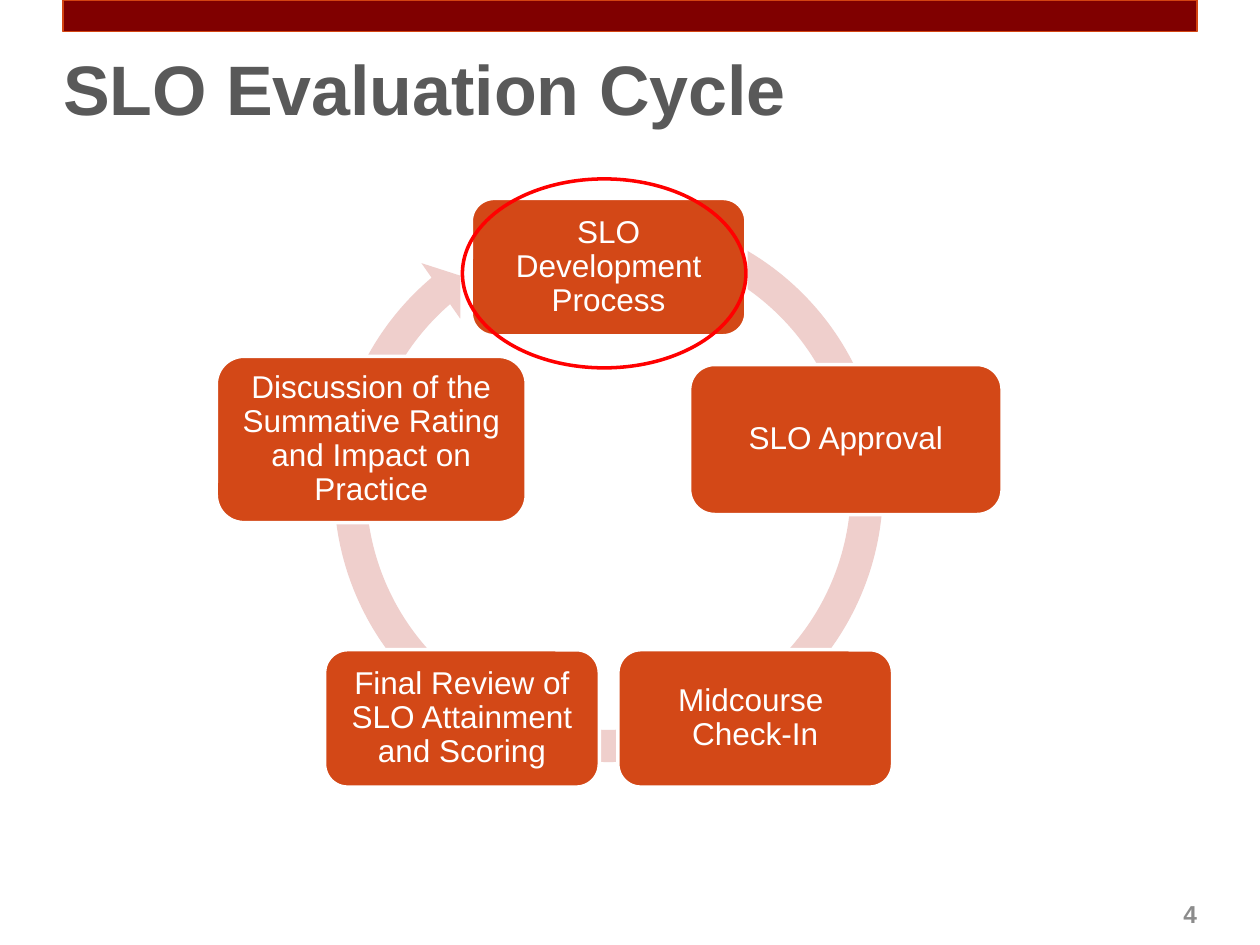
from dataclasses import dataclass
from math import cos, radians, sin

from pptx import Presentation
from pptx.dml.color import RGBColor
from pptx.enum.shapes import MSO_SHAPE
from pptx.enum.text import MSO_ANCHOR, MSO_AUTO_SIZE, PP_ALIGN
from pptx.util import Inches, Pt

CENTER_X, CENTER_Y, RADIUS = 4.83, 4.1, 1.98
ARROW_SIZE = 4.64


@dataclass
class Stage:
    text: str
    width: float = 2.18
    height: float = 1.09


STAGES = [
    Stage("SLO Development Process"),
    Stage("SLO Approval", 2.48, 1.19),
    Stage("Midcourse \nCheck-In"),
    Stage("Final Review of SLO Attainment and Scoring"),
    Stage("Discussion of the Summative Rating and Impact on Practice", 2.46, 1.32),
]


def color(value: str) -> RGBColor:
    return RGBColor.from_string(value)


def write(shape, text: str, *, size: float, ink: str, bold: bool = False,
          align=PP_ALIGN.LEFT, anchor=MSO_ANCHOR.BOTTOM,
          inset: tuple[float, float] = (0, 0), spacing: float = 1.0) -> None:
    """Fill a shape with text; inset is (horizontal, vertical) in inches."""
    frame = shape.text_frame
    frame.text = text
    frame.word_wrap = True
    frame.auto_size = MSO_AUTO_SIZE.NONE
    frame.vertical_anchor = anchor
    frame.margin_left = frame.margin_right = Inches(inset[0])
    frame.margin_top = frame.margin_bottom = Inches(inset[1])
    for paragraph in frame.paragraphs:
        paragraph.alignment = align
        paragraph.line_spacing = spacing
        for run in paragraph.runs:
            run.font.name = "Arial"
            run.font.size = Pt(size)
            run.font.bold = bold
            run.font.color.rgb = color(ink)


def add_figure(slide, kind, left: float, top: float, width: float, height: float,
               *, fill: str = "", line: str = "", weight: float = 2):
    figure = slide.shapes.add_shape(
        kind, Inches(left), Inches(top), Inches(width), Inches(height))
    figure.shadow.inherit = False
    if fill:
        figure.fill.solid()
        figure.fill.fore_color.rgb = color(fill)
    else:
        figure.fill.background()
    if line:
        figure.line.color.rgb = color(line)
        figure.line.width = Pt(weight)
    else:
        figure.line.fill.background()
    return figure


def add_stage(slide, stage: Stage, angle: float) -> None:
    """Center a stage on the ring, angle in degrees clockwise from the top."""
    x = CENTER_X + RADIUS * sin(radians(angle))
    y = CENTER_Y - RADIUS * cos(radians(angle))
    box = add_figure(slide, MSO_SHAPE.ROUNDED_RECTANGLE,
                     x - stage.width / 2, y - stage.height / 2,
                     stage.width, stage.height, fill="D34817", line="FFFFFF")
    write(box, stage.text, size=18, ink="FFFFFF", align=PP_ALIGN.CENTER,
          anchor=MSO_ANCHOR.MIDDLE, inset=(0.07, 0.07), spacing=0.9)


def main() -> None:
    deck = Presentation()
    deck.slide_width, deck.slide_height = Inches(10), Inches(7.5)
    slide = deck.slides.add_slide(deck.slide_layouts[5])

    # Top band, title and page number
    add_figure(slide, MSO_SHAPE.RECTANGLE, 0.5, 0, 9, 0.25,
               fill="800000", line="D34412", weight=0.75)
    title = slide.shapes.title
    title.left, title.top = Inches(0.5), Inches(0.3)
    title.width, title.height = Inches(9), Inches(0.78)
    write(title, "SLO Evaluation Cycle", size=40, ink="595959", bold=True,
          inset=(0, 0.05))
    page_number = slide.shapes.add_textbox(
        Inches(8.33), Inches(6.97), Inches(1.17), Inches(0.4))
    write(page_number, "4", size=14, ink="8C8C8C", bold=True, align=PP_ALIGN.RIGHT)

    # Ring arrow behind the stages
    ring = add_figure(slide, MSO_SHAPE.CIRCULAR_ARROW, CENTER_X - ARROW_SIZE / 2,
                      1.55, ARROW_SIZE, ARROW_SIZE, fill="EFCFCC")
    for index, value in enumerate((0.055, 3.31, 137.73, 173.88, 0.058)):
        ring.adjustments[index] = value

    # Stages, evenly spaced around the ring
    for index, stage in enumerate(STAGES):
        add_stage(slide, stage, index * 360 / len(STAGES))

    # Highlight around the current stage
    add_figure(slide, MSO_SHAPE.OVAL, 3.67, 1.42, 2.25, 1.5, line="FF0000")

    deck.save("out.pptx")


if __name__ == "__main__":
    main()
